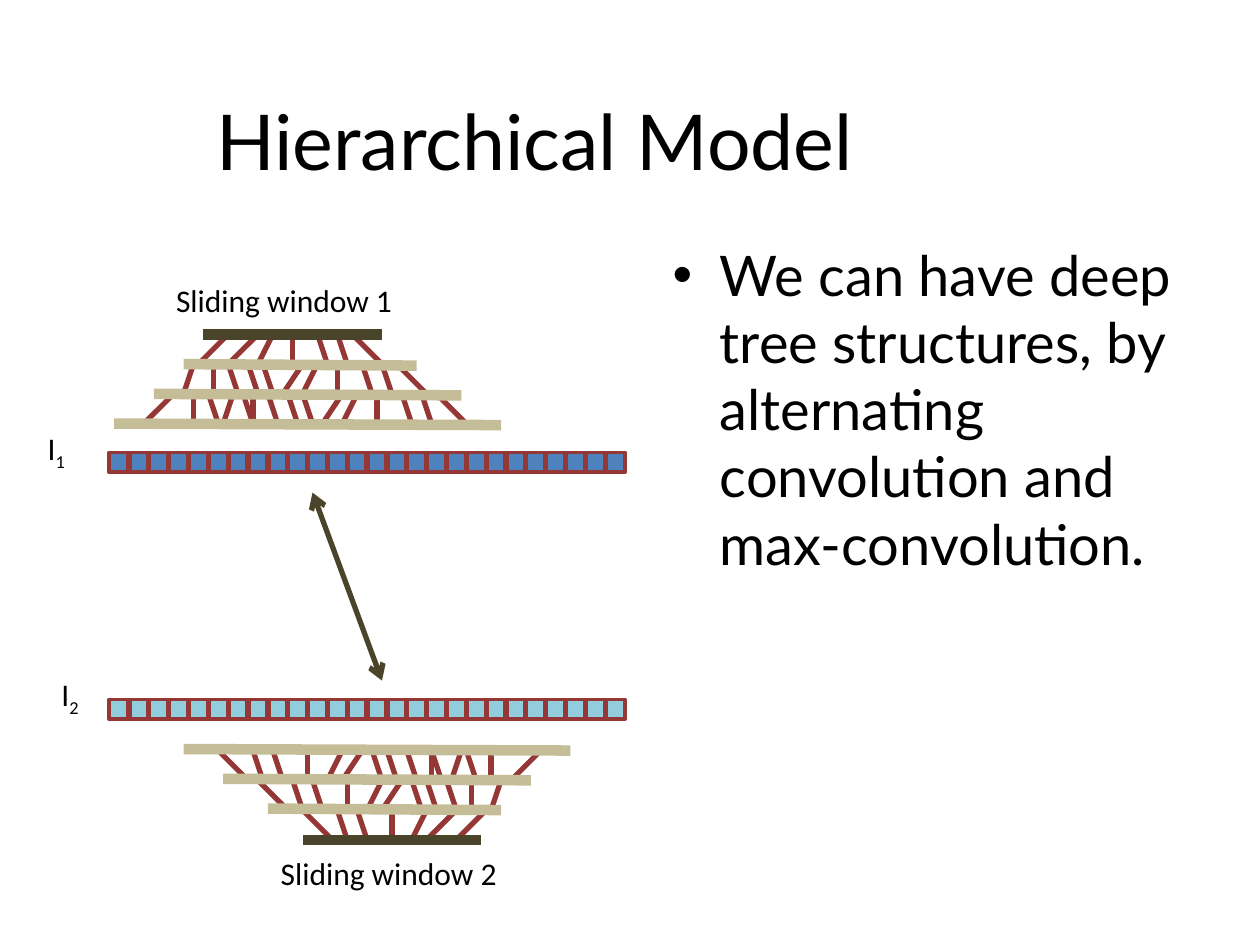
from dataclasses import dataclass

from lxml import etree
from pptx import Presentation
from pptx.dml.color import RGBColor
from pptx.enum.shapes import MSO_CONNECTOR, MSO_SHAPE
from pptx.enum.text import MSO_ANCHOR, MSO_AUTO_SIZE, PP_ALIGN
from pptx.oxml.ns import qn
from pptx.util import Cm, Pt

LINE, RECT = MSO_CONNECTOR.STRAIGHT, MSO_SHAPE.RECTANGLE
CENTER, MIDDLE, TOP = PP_ALIGN.CENTER, MSO_ANCHOR.MIDDLE, MSO_ANCHOR.TOP
FIT = MSO_AUTO_SIZE.SHAPE_TO_FIT_TEXT

BLACK, RED, OLIVE, TAN = "000000", "953735", "4A452A", "C4BD97"
CELL, CELLS = 0.4, 26
LEVEL_TOP, LEVEL_GAP = 6.74, 0.6
TILT = 0.03

# (x at upper level, x at lower level) in cm, one list per gap between levels
FANS = [
    [(6.4, 6.6), (6.8, 7.0), (5.5, 5.2), (4.6, 4.0), (7.1, 7.7), (5.9, 5.9),
     (5.2, 4.6)],
    [(4.6, 4.8), (5.0, 5.2), (5.3, 5.5), (4.3, 4.3), (3.9, 3.7), (7.3, 7.5),
     (7.7, 7.9), (6.4, 6.1), (8.0, 8.6), (6.8, 6.8), (6.1, 5.7)],
    [(5.4, 5.6), (5.8, 6.0), (6.1, 6.3), (5.1, 5.1), (4.7, 4.5), (8.1, 8.3),
     (8.5, 8.7), (7.2, 6.9), (8.8, 9.4), (7.6, 7.6), (6.9, 6.5), (4.2, 4.4),
     (4.9, 5.1), (3.9, 3.9), (3.5, 2.9)],
]
BARS = [(4.1, 7.7), (3.7, 8.4), (3.1, 9.3), (2.3, 10.1)]


@dataclass
class Strip:
    y: float
    fill: str
    index: str
    label_x: float
    label_y: float


@dataclass
class Window:
    label: str
    label_x: float
    label_y: float
    turned: bool

    def place(self, x: float, y: float) -> tuple[float, float]:
        """Turn a point half way round if this window faces up."""
        return (13.8 - x, 23.67 - y) if self.turned else (x, y)


STRIPS = [
    Strip(9.12, "4F81BD", "1", 0.71, 8.53),
    Strip(14.1, "93CDDD", "2", 0.99, 13.49),
]
WINDOWS = [
    Window("Sliding window 1", 3.3, 5.54, False),
    Window("Sliding window 2", 5.41, 17.09, True),
]


def rgb(value: str) -> RGBColor:
    return RGBColor.from_string(value)


def add_line(shapes, start, end, color: str, width: float):
    c = shapes.add_connector(LINE, *(Cm(v) for v in (*start, *end)))
    c.line.color.rgb = rgb(color)
    c.line.width = Pt(width)
    etree.SubElement(c._element.spPr, qn("a:effectLst"))
    return c


def add_box(shapes, x: float, y: float, w: float, h: float,
            wrap: bool = True, anchor=TOP):
    tf = shapes.add_textbox(Cm(x), Cm(y), Cm(w), Cm(h)).text_frame
    tf.word_wrap = wrap
    tf.vertical_anchor = anchor
    if not wrap:
        tf.auto_size = FIT
    return tf


def add_run(p, text: str, size: float, font: str):
    r = p.add_run()
    r.text = text
    r.font.size = Pt(size)
    r.font.name = font
    r.font.color.rgb = rgb(BLACK)
    return r


def add_strip(shapes, strip: Strip) -> None:
    left = 2.2
    sp = shapes.add_shape(RECT, Cm(left), Cm(strip.y), Cm(CELL * CELLS), Cm(CELL))
    sp.shadow.inherit = False
    sp.fill.solid()
    sp.fill.fore_color.rgb = rgb(strip.fill)
    sp.line.color.rgb = rgb(RED)
    sp.line.width = Pt(2)
    for i in range(1, CELLS):
        x = left + i * CELL
        add_line(shapes, (x, strip.y), (x, strip.y + CELL), RED, 3)


def add_strip_label(shapes, strip: Strip) -> None:
    tf = add_box(shapes, strip.label_x, strip.label_y, 0.97, 1.02, wrap=False)
    p = tf.paragraphs[0]
    add_run(p, "I", 18, "Calibri")
    r = add_run(p, strip.index, 18, "Calibri")
    r.font._element.set("baseline", "-25000")


def add_window(shapes, window: Window) -> None:
    levels = [LEVEL_TOP + i * LEVEL_GAP for i in range(len(BARS))]
    for fan, upper, lower in reversed(list(zip(FANS, levels, levels[1:]))):
        for x1, x2 in fan:
            add_line(shapes, window.place(x1, upper), window.place(x2, lower), RED, 3)
    for i, ((x1, x2), y) in enumerate(zip(BARS, levels)):
        color, tilt = (TAN, TILT) if i else (OLIVE, 0)
        add_line(shapes, window.place(x1, y), window.place(x2, y + tilt), color, 6)
    tf = add_box(shapes, window.label_x, window.label_y, 5.26, 1.02, wrap=False)
    add_run(tf.paragraphs[0], window.label, 18, "Calibri")


def add_match_arrow(shapes) -> None:
    c = add_line(shapes, (6.3, 9.93), (7.7, 13.72), OLIVE, 3)
    for end in ("a:headEnd", "a:tailEnd"):
        etree.SubElement(c.line._get_or_add_ln(), qn(end), type="arrow")


def add_bullet(p, indent: float) -> None:
    pPr = p._p.get_or_add_pPr()
    pPr.set("marL", str(Cm(indent)))
    pPr.set("indent", str(-Cm(indent)))
    etree.SubElement(pPr, qn("a:buFont"), typeface="Arial")
    etree.SubElement(pPr, qn("a:buChar"), char="•")


def main() -> None:
    prs = Presentation()
    prs.slide_width, prs.slide_height = Cm(25.4), Cm(19.05)
    s = prs.slides.add_slide(prs.slide_layouts[6])

    p = add_box(s.shapes, -1.73, 1.52, 25.02, 2.59, anchor=MIDDLE).paragraphs[0]
    p.alignment = CENTER
    add_run(p, "Hierarchical Model", 44, "Lato")

    strips = s.shapes.add_group_shape().shapes
    for strip in STRIPS:
        add_strip(strips, strip)
    for strip in STRIPS:
        add_strip_label(strips, strip)
    add_match_arrow(s.shapes)
    for window in WINDOWS:
        add_window(s.shapes.add_group_shape().shapes, window)

    p = add_box(s.shapes, 13.31, 4.72, 11.2, 8.41).paragraphs[0]
    add_bullet(p, 0.95)
    add_run(p, "We can have deep tree structures, by alternating "
               "convolution and max-convolution.", 32, "Lato")
    prs.save("out.pptx")


if __name__ == "__main__":
    main()
